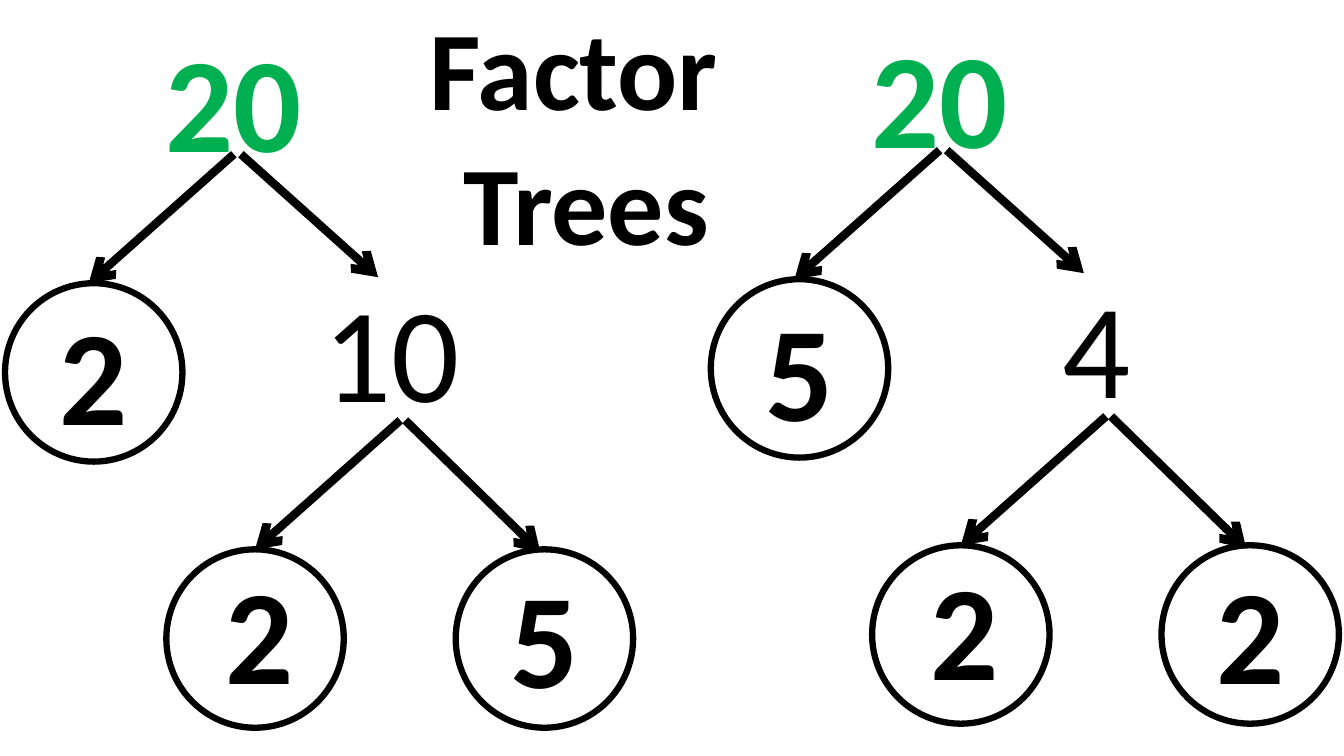
from lxml.etree import SubElement
from pptx import Presentation
from pptx.dml.color import RGBColor
from pptx.enum.shapes import MSO_CONNECTOR, MSO_SHAPE
from pptx.enum.text import MSO_ANCHOR, MSO_AUTO_SIZE, PP_ALIGN
from pptx.oxml.ns import qn
from pptx.util import Inches, Pt

BLACK = RGBColor(0x00, 0x00, 0x00)
GREEN = RGBColor(0x00, 0xB0, 0x50)
FONT = "Calibri"

# The grid has square cells, one inch to a column and to a row.
CELL = Inches(1)
COLUMNS, ROWS = 13.33, 7.5
CIRCLE_WIDTH, CIRCLE_HEIGHT = 1.76, 1.77
NUMBER_HEIGHT = 1.72

# Places within a tree: column and row from the tree's corner.
ROOT = (1.3, 0.13, 2.04)
BRANCH = (3, 2.61, 1.76)
ARROWS = [
    ((2.32, 1.53), (0.88, 2.81)),
    ((2.39, 1.53), (3.75, 2.75)),
    ((3.97, 4.17), (2.53, 5.45)),
    ((4.02, 4.17), (5.36, 5.48)),
]
CIRCLES = [(0.05, 2.81), (1.65, 5.45), (4.52, 5.45)]
PRIMES = [(0.43, 2.84, 1), (2.07, 5.41, 1), (4.9, 5.45, 1)]

# Corner column and row, root, composite branch, primes.
TREES = [
    (0, 0, "20", "10", ["2", "2", "5"]),
    (7, -0.04, "20", "4", ["5", "2", "2"]),
]


def cells(*counts):
    return [round(count * CELL) for count in counts]


def write_centred(text_frame, text, size, color, bold):
    text_frame.word_wrap = True
    text_frame.auto_size = MSO_AUTO_SIZE.NONE
    text_frame.vertical_anchor = MSO_ANCHOR.TOP
    text_frame.text = text
    for paragraph in text_frame.paragraphs:
        paragraph.alignment = PP_ALIGN.CENTER
        paragraph.font.name = FONT
        paragraph.font.size = Pt(size)
        paragraph.font.bold = bold
        paragraph.font.color.rgb = color


def add_title(slide):
    title = slide.shapes.title
    title.left, title.top, title.width, title.height = cells(4.04, -0.06, 3.55, 2.79)
    write_centred(title.text_frame, "Factor \nTrees", 80, BLACK, True)


def add_number(slide, corner, place, text, color=BLACK, bold=True):
    column, row, width = place
    box = slide.shapes.add_textbox(
        *cells(corner[0] + column, corner[1] + row, width, NUMBER_HEIGHT))
    write_centred(box.text_frame, text, 96, color, bold)


def add_circle(slide, corner, place):
    circle = slide.shapes.add_shape(
        MSO_SHAPE.OVAL,
        *cells(corner[0] + place[0], corner[1] + place[1], CIRCLE_WIDTH, CIRCLE_HEIGHT))
    circle.shadow.inherit = False
    circle.fill.background()
    circle.line.color.rgb = BLACK
    circle.line.width = Pt(4.5)


def add_arrow(slide, corner, start, end):
    arrow = slide.shapes.add_connector(
        MSO_CONNECTOR.STRAIGHT,
        *cells(corner[0] + start[0], corner[1] + start[1],
               corner[0] + end[0], corner[1] + end[1]))
    arrow.line.color.rgb = BLACK
    arrow.line.width = Pt(6)
    SubElement(arrow.line._get_or_add_ln(), qn("a:tailEnd"), type="arrow")
    SubElement(arrow._element.spPr, qn("a:effectLst"))


def add_factor_tree(slide, corner, root, branch, primes):
    add_number(slide, corner, ROOT, root, color=GREEN)
    add_number(slide, corner, BRANCH, branch, bold=False)
    for start, end in ARROWS:
        add_arrow(slide, corner, start, end)
    for circle, place, prime in zip(CIRCLES, PRIMES, primes):
        add_number(slide, corner, place, prime)
        add_circle(slide, corner, circle)


def main():
    presentation = Presentation()
    presentation.slide_width, presentation.slide_height = cells(COLUMNS, ROWS)
    slide = presentation.slides.add_slide(presentation.slide_layouts[5])
    add_title(slide)
    for column, row, root, branch, primes in TREES:
        add_factor_tree(slide, (column, row), root, branch, primes)
    presentation.save("out.pptx")


if __name__ == "__main__":
    main()
